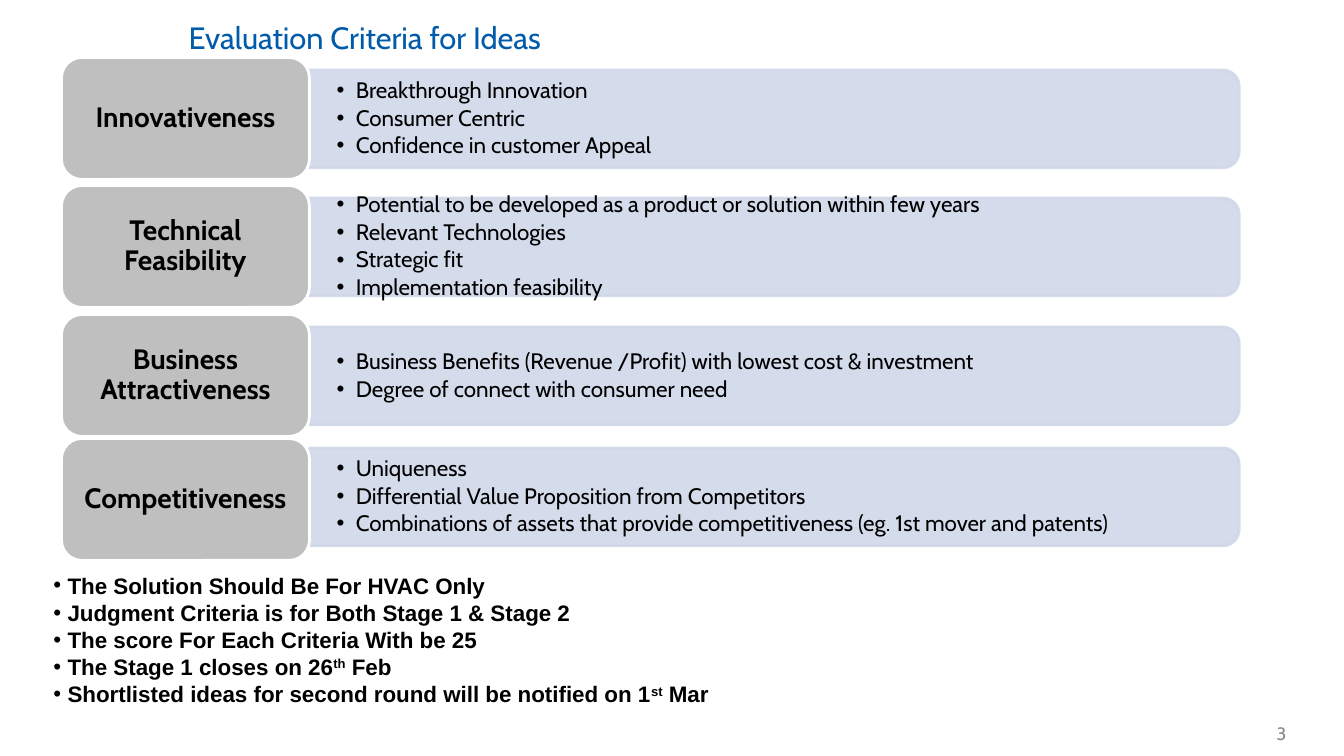
"""Build the slide of evaluation criteria for ideas."""
from dataclasses import dataclass

import pptx
import pptx.dml.color
import pptx.enum.shapes
import pptx.enum.text
import pptx.oxml
import pptx.oxml.ns
import pptx.util

Inches = pptx.util.Inches
Pt = pptx.util.Pt
RGBColor = pptx.dml.color.RGBColor
MSO_SHAPE = pptx.enum.shapes.MSO_SHAPE
PP_ALIGN = pptx.enum.text.PP_ALIGN
MSO_ANCHOR = pptx.enum.text.MSO_ANCHOR
qn = pptx.oxml.ns.qn

BLUE = RGBColor(0x00, 0x5B, 0xAA)
BAND = RGBColor(0xD0, 0xD8, 0xE8)
TILE = RGBColor(0xBF, 0xBF, 0xBF)
GREY = RGBColor(0x89, 0x89, 0x89)
BLACK = RGBColor(0, 0, 0)
WHITE = RGBColor(255, 255, 255)

TITLE_FONT = {"name": "Cabin", "size": Pt(22), "color": BLUE}
NUMBER_FONT = {"name": "Cabin", "size": Pt(12.8), "color": GREY}
LABEL_FONT = {"name": "Cabin", "size": Pt(20), "bold": True, "color": BLACK}
POINT_FONT = {"name": "Cabin", "size": Pt(16), "color": BLACK}
NOTE_FONT = {"name": "Arial", "size": Pt(16), "bold": True, "color": BLACK}

TILE_LEFT, TILE_WIDTH, TILE_HEIGHT = 0.61, 2.46, 1.21
BAND_LEFT, BAND_LENGTH, BAND_HEIGHT = 3.07, 9.22, 0.97
POINTS_WIDTH, POINTS_HEIGHT = 9.17, 0.88


@dataclass
class Criterion:
    """A criterion with the top of its tile and the middle of its band."""

    name: str
    tile_top: float
    band_middle: float
    points: list[str]


CRITERIA = [
    Criterion("Innovativeness", 0.57, 1.18, [
        "Breakthrough Innovation", "Consumer Centric",
        "Confidence in customer Appeal"]),
    Criterion("Technical Feasibility", 1.84, 2.45, [
        "Potential to be developed as a product or solution within few years",
        "Relevant Technologies", "Strategic fit",
        "Implementation feasibility"]),
    Criterion("Business Attractiveness", 3.12, 3.73, [
        "Business Benefits (Revenue /Profit) with lowest cost & investment",
        "Degree of connect with consumer need"]),
    Criterion("Competitiveness", 4.35, 4.93, [
        "Uniqueness", "Differential Value Proposition from Competitors",
        "Combinations of assets that provide competitiveness "
        "(eg. 1st mover and patents)"]),
]

NOTES = [
    ["The Solution Should Be For HVAC Only"],
    ["Judgment Criteria is for Both Stage 1 & Stage 2"],
    ["The score For Each Criteria With be 25"],
    ["The Stage 1 closes on 26", "th", " Feb"],
    ["Shortlisted ideas for second round will be notified on 1", "st", " Mar"],
]


def apply(obj: object, values: dict) -> None:
    """Set every attribute in the dict."""
    for name, value in values.items():
        setattr(obj, name, value)


def place(sp, left: float, top: float, width: float, height: float) -> None:
    """Move and size a shape in inches."""
    apply(sp, {"left": Inches(left), "top": Inches(top),
               "width": Inches(width), "height": Inches(height)})


def frame(sp, across: float, down: float, anchor=MSO_ANCHOR.MIDDLE):
    """Format a text frame and return it."""
    tf = sp.text_frame
    apply(tf, {"word_wrap": True, "vertical_anchor": anchor,
               "auto_size": pptx.enum.text.MSO_AUTO_SIZE.NONE,
               "margin_left": Inches(across), "margin_right": Inches(across),
               "margin_top": Inches(down), "margin_bottom": Inches(down)})
    return tf


def add_run(p, text: str, font: dict):
    """Add a formatted run."""
    r = p.add_run()
    r.text = text
    apply(r.font, {k: v for k, v in font.items() if k != "color"})
    r.font.color.rgb = font["color"]
    return r


def write(tf, text: str, font: dict, align, spacing: float = 1.0) -> None:
    """Write a single paragraph."""
    p = tf.paragraphs[0]
    apply(p, {"alignment": align, "line_spacing": spacing})
    add_run(p, text, font)


def write_bullets(tf, items: list[list[str]], font: dict, indent: float,
                  line_spacing, after) -> None:
    """Write bullets, raising every second run of an item."""
    for i, parts in enumerate(items):
        p = tf.paragraphs[0] if i == 0 else tf.add_paragraph()
        pPr = p._p.get_or_add_pPr()
        pPr.set("marL", str(Inches(indent)))
        pPr.set("indent", str(-Inches(indent)))
        bullet_font = pptx.oxml.parse_xml(
            f'<a:buFont {pptx.oxml.ns.nsdecls("a")} typeface="Arial"/>')
        bullet = pptx.oxml.parse_xml(
            f'<a:buChar {pptx.oxml.ns.nsdecls("a")} char="•"/>')
        pPr.extend([bullet_font, bullet])
        apply(p, {"alignment": PP_ALIGN.LEFT, "line_spacing": line_spacing,
                  "space_before": Pt(0), "space_after": after})
        for j, part in enumerate(parts):
            r = add_run(p, part, font)
            if j % 2:
                r._r.get_or_add_rPr().set("baseline", "30000")


def add_box(s, kind, box: tuple, fill: RGBColor, line: RGBColor):
    """Add a filled and outlined preset shape."""
    sp = s.shapes.add_shape(kind, *map(Inches, box))
    sp.shadow.inherit = False
    sp.fill.solid()
    sp.fill.fore_color.rgb = fill
    sp.line.color.rgb = line
    sp.line.width = Pt(2)
    return sp


def add_criterion(s, c: Criterion) -> None:
    """Draw the band, points and tile of a criterion."""
    band = add_box(s, MSO_SHAPE.ROUND_2_SAME_RECTANGLE,
                   (BAND_LEFT + (BAND_LENGTH - BAND_HEIGHT) / 2,
                    c.band_middle - BAND_LENGTH / 2,
                    BAND_HEIGHT, BAND_LENGTH), BAND, BAND)
    band.rotation = 90
    for color in band._element.spPr.iter(qn("a:srgbClr")):
        color.append(pptx.oxml.parse_xml(
            f'<a:alpha {pptx.oxml.ns.nsdecls("a")} val="90000"/>'))

    points = s.shapes.add_textbox(
        Inches(BAND_LEFT), Inches(c.band_middle - POINTS_HEIGHT / 2),
        Inches(POINTS_WIDTH), Inches(POINTS_HEIGHT))
    write_bullets(frame(points, 0.27, 0.14), [[t] for t in c.points],
                  POINT_FONT, 0.19, 0.9, Pt(2.4))

    tile = add_box(s, MSO_SHAPE.ROUNDED_RECTANGLE,
                   (TILE_LEFT, c.tile_top, TILE_WIDTH, TILE_HEIGHT),
                   TILE, WHITE)
    write(frame(tile, 0.14, 0.1), c.name, LABEL_FONT, PP_ALIGN.CENTER, 0.9)


def main() -> None:
    """Build and save the slide."""
    prs = pptx.Presentation()
    prs.slide_width, prs.slide_height = Inches(13.33), Inches(7.5)
    s = prs.slides.add_slide(prs.slide_layouts[1])
    title, notes = s.shapes.title, s.placeholders[1]

    place(title, 1.73, 0.02, 9.39, 0.75)
    write(frame(title, 0.14, 0.07), "Evaluation Criteria for Ideas",
          TITLE_FONT, PP_ALIGN.LEFT, 0.9)

    for c in CRITERIA:
        add_criterion(s, c)

    place(notes, 0.43, 5.62, 7.08, 1.45)
    write_bullets(frame(notes, 0.1, 0.05, MSO_ANCHOR.TOP), NOTES, NOTE_FONT,
                  0.14, Pt(19.4), Pt(0))

    number = s.shapes.add_textbox(Inches(12.35), Inches(7.08),
                                  Inches(0.55), Inches(0.4))
    write(frame(number, 0.14, 0.07), "3", NUMBER_FONT, PP_ALIGN.RIGHT)
    prs.save("out.pptx")


if __name__ == "__main__":
    main()
